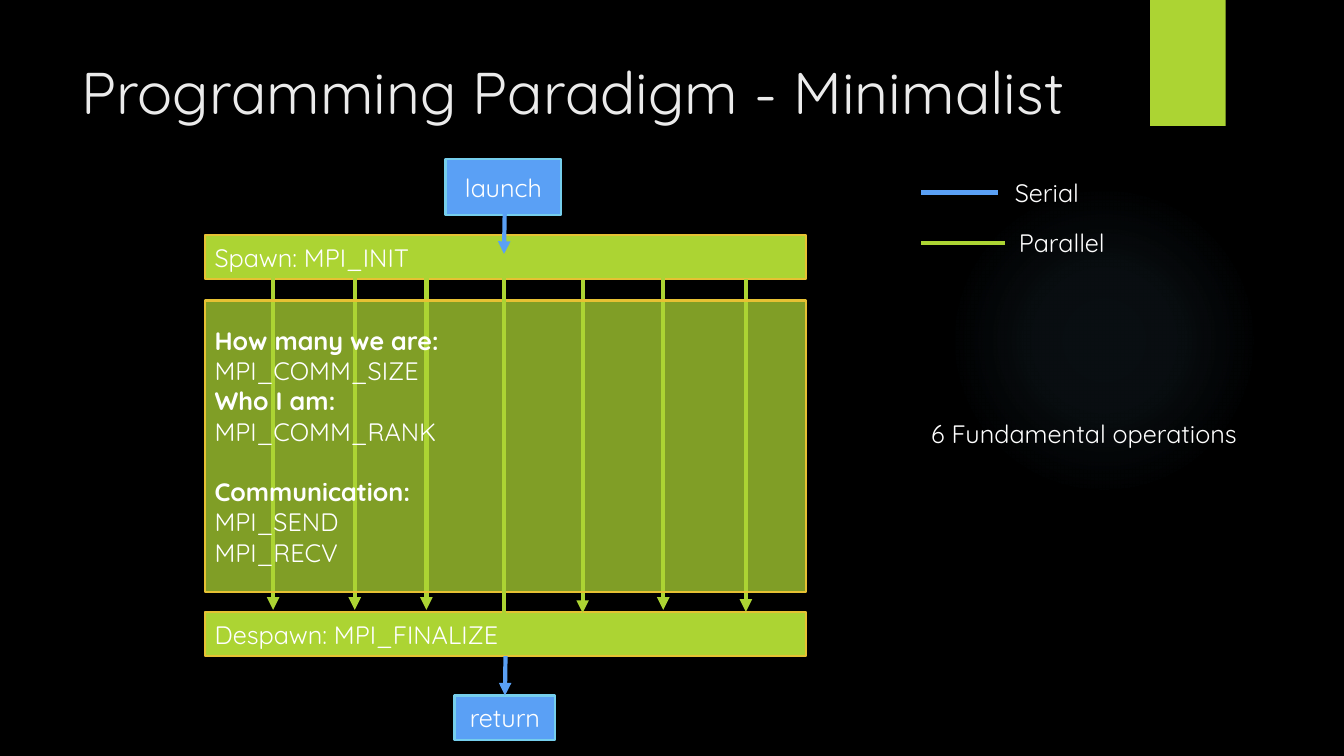
import pptx
import pptx.dml.color
import pptx.enum.shapes
import pptx.enum.text
import pptx.oxml
import pptx.oxml.ns
import pptx.util
from lxml import etree

Pt = pptx.util.Pt
SHAPES = pptx.enum.shapes.MSO_SHAPE
ALIGN = pptx.enum.text.PP_ALIGN
ANCHOR = pptx.enum.text.MSO_ANCHOR
qn = pptx.oxml.ns.qn

TITLE = "Programming Paradigm - Minimalist"
LAUNCH, RETURN = "launch", "return"
SPAWN, DESPAWN = "Spawn: MPI_INIT", "Despawn: MPI_FINALIZE"
# groups of (text, bold)
OPERATIONS = [
    [("How many we are:", True), ("MPI_COMM_SIZE", False),
     ("Who I am:", True), ("MPI_COMM_RANK", False)],
    [("Communication:", True), ("MPI_SEND", False), ("MPI_RECV", False)],
]
SUMMARY = "6 Fundamental operations"
# label, colour, line y, line end x, label x, label width
LEGEND = [
    ("Serial", "serial", 137.5, 712.8, 717.8, 60.5),
    ("Parallel", "parallel", 173.5, 717.8, 720.7, 78.5),
]
# x, start y of each parallel thread beside the middle one
THREADS = [(195.1, 198), (253.4, 198), (304.6, 198),
           (416.2, 200.2), (473.8, 198), (532.8, 199.4)]
GLOW_STOPS = [(0, 7), (36, 6), (69, 0)]  # position %, opacity %

THEME = {
    "font": "Quicksand", "title_size": 42, "body_size": 18,
    "background": "000000", "title": "EBEBEB", "text": "FFFFFF",
    "serial": "5AA0F5", "serial_edge": "75CEEC",
    "parallel": "ACD433", "parallel_edge": "E6C133", "glow": "7AC4F0",
    "edge_width": 1.5, "line_width": 3, "panel_opacity": 75,
}
BLOCK_LEFT, BLOCK_WIDTH, BAR_HEIGHT = 146.2, 429.8, 31.7
LEGEND_LEFT, LABEL_HEIGHT = 658.1, 28.8
THREAD_LENGTH = 237.6
MIDDLE = 360
GROUP_GAP = 21.6


def rgb(role):
    return pptx.dml.color.RGBColor.from_string(THEME[role])


def write(frame, groups, size="body_size", color="text", align=ALIGN.LEFT):
    """Fill the frame with groups of (text, bold) lines, a gap between groups."""
    fresh = True
    for group in groups:
        for index, (text, bold) in enumerate(group):
            paragraph = frame.paragraphs[0] if fresh else frame.add_paragraph()
            paragraph.text = text
            paragraph.alignment = align
            if index == 0 and not fresh:
                paragraph.space_before = Pt(GROUP_GAP)
            paragraph.font.name = THEME["font"]
            paragraph.font.size = Pt(THEME[size])
            paragraph.font.bold = bold
            paragraph.font.color.rgb = rgb(color)
            fresh = False


def add_label(slide, text, left, top, width, height, wrap=True, **style):
    label = slide.shapes.add_textbox(Pt(left), Pt(top), Pt(width), Pt(height))
    label.text_frame.word_wrap = wrap
    write(label.text_frame, [[(text, False)]], **style)


def add_plain(slide, kind, left, top, width, height, color):
    plain = slide.shapes.add_shape(kind, Pt(left), Pt(top), Pt(width), Pt(height))
    plain.shadow.inherit = False
    plain.fill.solid()
    plain.fill.fore_color.rgb = rgb(color)
    plain.line.fill.background()
    return plain


def add_block(slide, groups, left, top, width, height, color, align=ALIGN.LEFT):
    block = add_plain(slide, SHAPES.RECTANGLE, left, top, width, height, color)
    block.line.color.rgb = rgb(color + "_edge")
    block.line.width = Pt(THEME["edge_width"])
    block.text_frame.word_wrap = True
    block.text_frame.vertical_anchor = ANCHOR.MIDDLE
    write(block.text_frame, groups, align=align)
    return block


def add_line(slide, x1, y1, x2, y2, color, arrow=True):
    line = slide.shapes.add_connector(
        pptx.enum.shapes.MSO_CONNECTOR.STRAIGHT, Pt(x1), Pt(y1), Pt(x2), Pt(y2))
    line.line.color.rgb = rgb(color)
    line.line.width = Pt(THEME["line_width"])
    if arrow:
        etree.SubElement(line.line._get_or_add_ln(), qn("a:tailEnd"), type="triangle")
    etree.SubElement(line._element.spPr, qn("a:effectLst"))
    return line


def add_glow(slide):
    glow = add_plain(slide, SHAPES.OVAL, 677.5, 131.8, 221.8, 221.8, "glow")
    stops = "".join(
        f'<a:gs pos="{position * 1000}"><a:srgbClr val="{THEME["glow"]}">'
        f'<a:alpha val="{opacity * 1000}"/></a:srgbClr></a:gs>'
        for position, opacity in GLOW_STOPS)
    gradient = pptx.oxml.parse_xml(
        f'<a:gradFill {pptx.oxml.ns.nsdecls("a")}><a:gsLst>{stops}</a:gsLst>'
        '<a:path path="circle"><a:fillToRect l="50000" t="50000" r="50000" b="50000"/>'
        '</a:path></a:gradFill>')
    properties = glow._element.spPr
    properties.replace(properties.find(qn("a:solidFill")), gradient)


def add_bar(slide, text, top):
    return add_block(slide, [[(text, False)]], BLOCK_LEFT, top,
                     BLOCK_WIDTH, BAR_HEIGHT, "parallel")


def add_step(slide, text, left, top, width, height):
    return add_block(slide, [[(text, False)]], left, top, width, height,
                     "serial", ALIGN.CENTER)


def main():
    deck = pptx.Presentation()
    deck.slide_width, deck.slide_height = Pt(960), Pt(540)
    slide = deck.slides.add_slide(deck.slide_layouts[6])
    slide.background.fill.solid()
    slide.background.fill.fore_color.rgb = rgb("background")

    add_glow(slide)
    add_plain(slide, SHAPES.RECTANGLE, 821.5, 0, 54, 90, "parallel")
    add_label(slide, TITLE, 51.1, 36, 740.9, 110.2, size="title_size", color="title")

    despawn_bar = add_bar(slide, DESPAWN, 437)
    add_bar(slide, SPAWN, 167.8)
    return_step = add_step(slide, RETURN, 324.7, 496.8, 72, BAR_HEIGHT)
    add_step(slide, LAUNCH, 318.2, 113.8, 82.8, 39.6)

    for text, color, y, line_end, left, width in LEGEND:
        add_line(slide, LEGEND_LEFT, y, line_end, y, color, arrow=False)
        add_label(slide, text, left, y - LABEL_HEIGHT / 2, width, LABEL_HEIGHT, wrap=False)

    for x, start in THREADS:
        add_line(slide, x, start, x, start + THREAD_LENGTH, "parallel")
    panel = add_block(slide, OPERATIONS, BLOCK_LEFT, 214.6, BLOCK_WIDTH, 208.1, "parallel")
    panel_color = panel._element.spPr.find(qn("a:solidFill"))[0]
    etree.SubElement(panel_color, qn("a:alpha"), val=str(THEME["panel_opacity"] * 1000))
    add_label(slide, SUMMARY, LEGEND_LEFT, 295.2, 248.4, LABEL_HEIGHT)

    add_line(slide, MIDDLE, 183.6, MIDDLE, 450.7, "parallel")
    finish = add_line(slide, MIDDLE, 468.7, MIDDLE, 496.8, "serial")
    finish.begin_connect(despawn_bar, 2)
    finish.end_connect(return_step, 0)
    add_line(slide, MIDDLE + 0.7, 141.1, MIDDLE, 181.4, "serial")

    deck.save("out.pptx")


if __name__ == "__main__":
    main()
